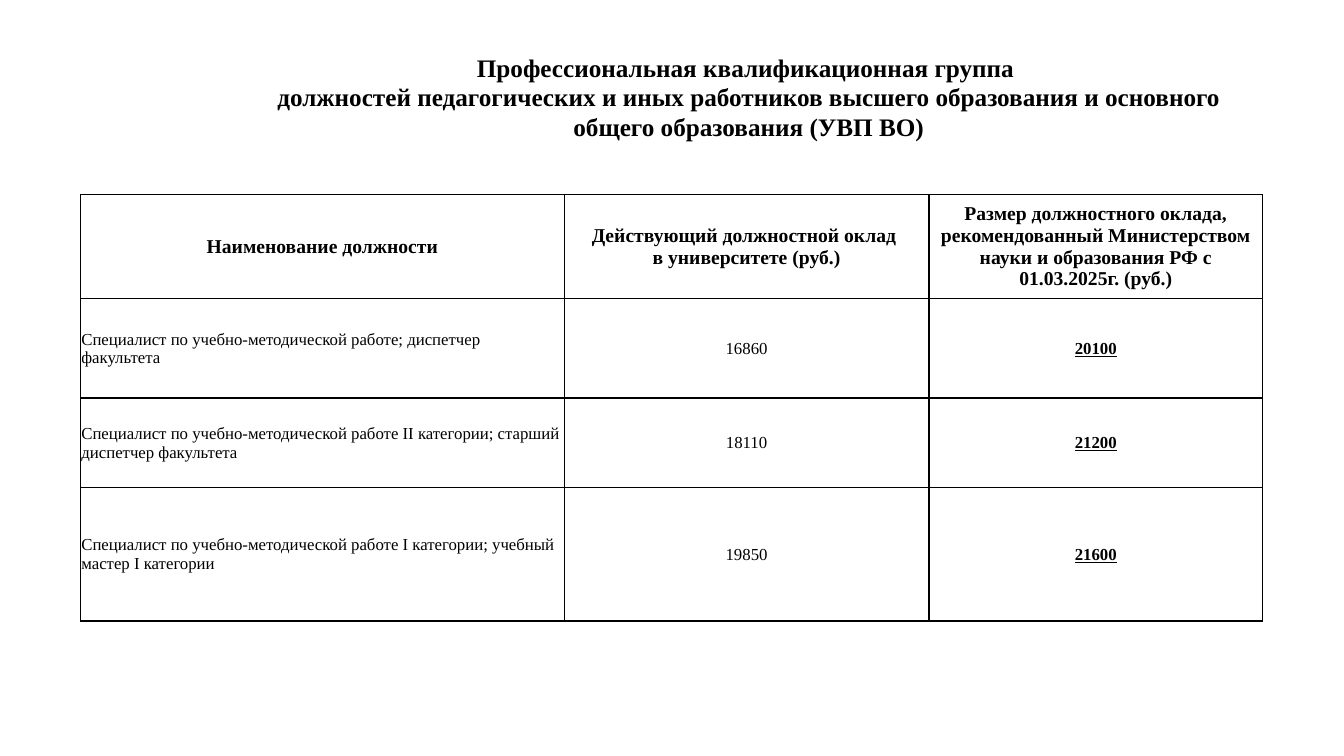
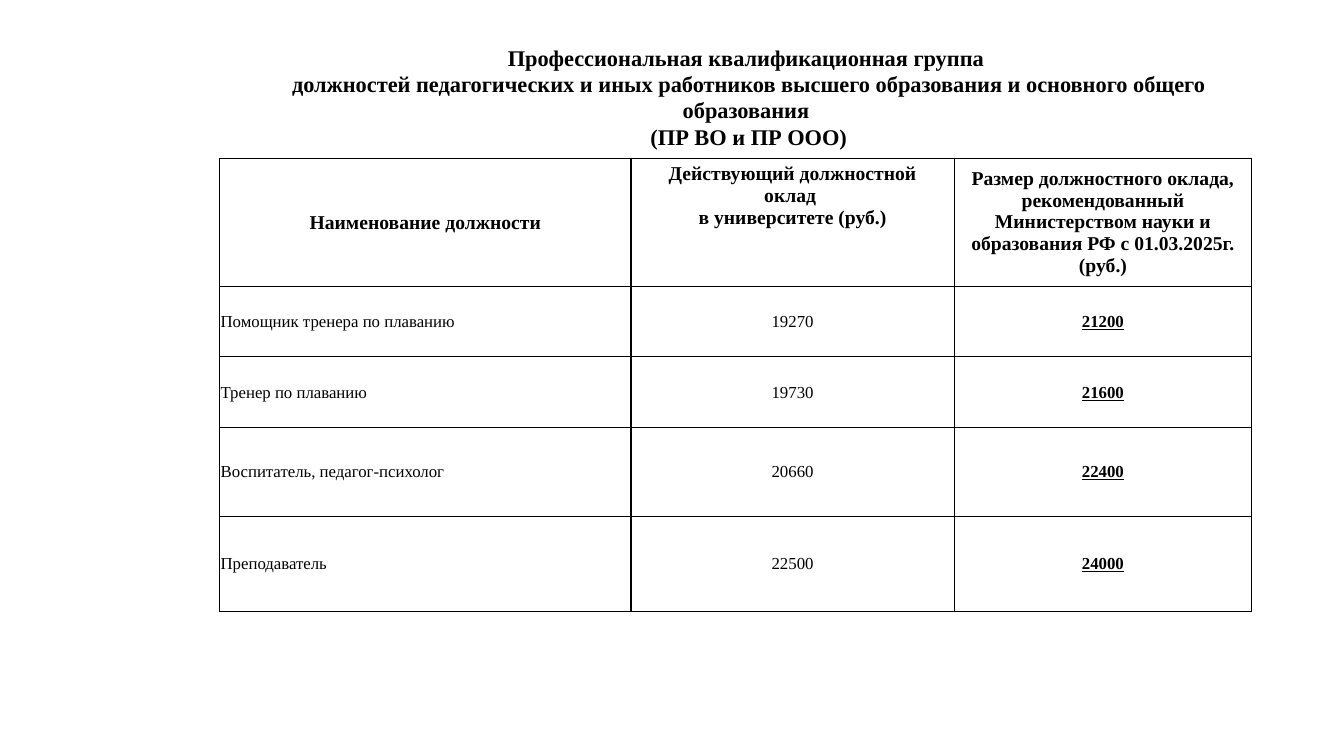
from lxml.etree import SubElement
from pptx import Presentation
from pptx.dml.color import RGBColor
from pptx.enum.text import MSO_ANCHOR, PP_ALIGN
from pptx.oxml.ns import qn
from pptx.util import Cm, Pt

FONT = "Times New Roman"
BLACK = "000000"
WHITE = "FFFFFF"
GROUP = "Профессиональная квалификационная группа "
STAFF = ("должностей педагогических и иных работников высшего образования "
         "и основного общего образования ")
HEADERS = (
    "Наименование должности",
    "Действующий должностной оклад \nв университете (руб.)",
    "Размер должностного оклада, рекомендованный Министерством науки "
    "и образования РФ с 01.03.2025г. (руб.)",
)
SUPPORT_STAFF = [
    ("Специалист по учебно-методической работе; диспетчер факультета", 16860, 20100),
    ("Специалист по учебно-методической работе II категории; "
     "старший диспетчер факультета", 18110, 21200),
    ("Специалист по учебно-методической работе I категории; "
     "учебный мастер I категории", 19850, 21600),
]
TEACHING_STAFF = [
    ("Помощник тренера по плаванию", 19270, 21200),
    ("Тренер по плаванию", 19730, 21600),
    ("Воспитатель, педагог-психолог", 20660, 22400),
    ("Преподаватель", 22500, 24000),
]


def color(value):
    return RGBColor.from_string(value)


def add_run(p, text, size, bold=False, underline=False):
    r = p.add_run()
    r.text = text
    r.font.name = FONT
    r.font.size = Pt(size)
    r.font.bold = bold
    r.font.underline = underline
    r.font.color.rgb = color(BLACK)


def add_title(s, lines, size):
    tf = s.shapes.add_textbox(Cm(6.22), Cm(1.02), Cm(25.3), Cm(3.68)).text_frame
    tf.word_wrap = True
    tf.vertical_anchor = MSO_ANCHOR.MIDDLE
    tf.margin_bottom = Cm(0.9)
    p = tf.paragraphs[0]
    p.alignment = PP_ALIGN.CENTER
    p.line_spacing = 0.97
    for i, line in enumerate(lines):
        if i:
            p.add_line_break()
        add_run(p, line, size, bold=True)


def add_borders(cell):
    tc_pr = cell._tc.get_or_add_tcPr()
    for side in ("a:lnL", "a:lnR", "a:lnT", "a:lnB"):
        ln = SubElement(tc_pr, qn(side), w=str(Pt(1)))
        SubElement(SubElement(ln, qn("a:solidFill")), qn("a:srgbClr"), val=BLACK)


def style_cell(cell, tight, anchor=MSO_ANCHOR.MIDDLE):
    add_borders(cell)
    cell.fill.solid()
    cell.fill.fore_color.rgb = color(WHITE)
    cell.vertical_anchor = anchor
    if tight:
        cell.margin_left = cell.margin_right = cell.margin_top = Cm(0.02)
        cell.margin_bottom = 0


def fill_cell(cell, text, align, **style):
    tf = cell.text_frame
    for i, line in enumerate(text.split("\n")):
        p = tf.add_paragraph() if i else tf.paragraphs[0]
        p.alignment = align
        add_run(p, line, **style)


def add_salary_table(s, left, top, widths, heights, positions, salary_anchor):
    """Draw a table of positions; salary_anchor places the second header."""
    table = s.shapes.add_table(len(heights), len(widths), Cm(left), Cm(top),
                               Cm(sum(widths)), Cm(sum(heights))).table
    table.first_row = table.horz_banding = False
    for column, width in zip(table.columns, widths):
        column.width = Cm(width)
    for row, height in zip(table.rows, heights):
        row.height = Cm(height)

    for col, header in enumerate(HEADERS):
        cell = table.cell(0, col)
        style_cell(cell, tight=col == 0,
                   anchor=salary_anchor if col == 1 else MSO_ANCHOR.MIDDLE)
        fill_cell(cell, header, PP_ALIGN.CENTER, size=14, bold=True)
    for row, position in enumerate(positions, 1):
        for col, value in enumerate(position):
            cell = table.cell(row, col)
            style_cell(cell, tight=True)
            fill_cell(cell, str(value), PP_ALIGN.CENTER if col else PP_ALIGN.LEFT,
                      size=12, bold=col == 2, underline=col == 2)


def main():
    prs = Presentation()
    prs.slide_width, prs.slide_height = Cm(33.87), Cm(19.05)
    blank = prs.slide_layouts[6]

    s = prs.slides.add_slide(blank)
    add_title(s, [GROUP, STAFF + "(УВП ВО)"], 18)
    add_salary_table(s, 2.03, 4.9, (12.19, 9.19, 8.41), (2.44, 2.5, 2.26, 3.36),
                     SUPPORT_STAFF, MSO_ANCHOR.MIDDLE)

    s = prs.slides.add_slide(blank)
    add_title(s, [GROUP, STAFF, "(ПР ВО и ПР ООО)"], 16)
    add_salary_table(s, 5.54, 3.99, (10.36, 8.15, 7.49), (3, 1.78, 1.78, 2.24, 2.4),
                     TEACHING_STAFF, MSO_ANCHOR.TOP)

    prs.save("out.pptx")


if __name__ == "__main__":
    main()
